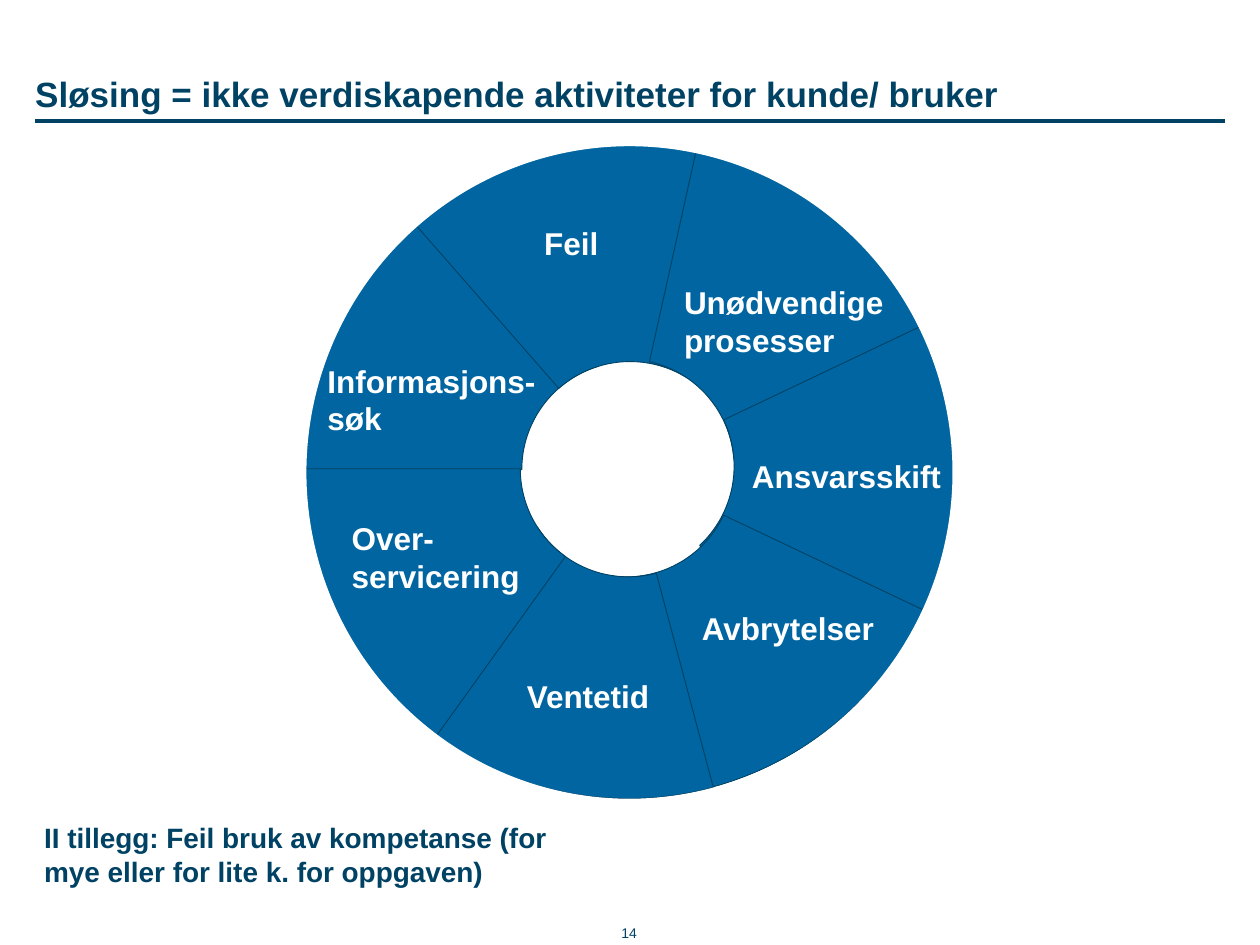
import math
from lxml import etree
from pptx import Presentation
from pptx import util as u
from pptx.dml.color import RGBColor
from pptx.enum import shapes, text
from pptx.oxml.ns import qn

# Content
TITLE = "Sløsing = ikke verdiskapende aktiviteter for kunde/ bruker"
FOOTNOTE = "II tillegg: Feil bruk av kompetanse (for mye eller for lite k. for oppgaven)"
PAGE_NUMBER = "14"
NAVY, BLUE, WHITE = "004264", "0065A0", "FFFFFF"

# Wheel sectors, back to front: centre (cm), start and end angle (degrees)
INNER_RADIUS, OUTER_RADIUS, ARC_STEPS = 2.18, 6.65, 32
SECTORS = [
    ((12.7, 9.47), 180, 106.8),
    ((12.7, 9.47), 131.2, 58.4),
    ((12.62, 9.42), 77.5, 4.6),
    ((12.62, 9.4), 25.4, -47.1),
    ((12.62, 9.45), -25.4, -98.6),
    ((12.67, 9.45), -75.1, -147),
    ((12.67, 9.45), -125.7, -180),
]

# Labels: lines, then left, top, width, height (cm)
LABELS = [
    (["Unødvendige", "prosesser"], (13.69, 5.61, 4.27, 2.51)),
    (["Ansvarsskift"], (15.06, 9.12, 4.04, 0.97)),
    (["Avbrytelser"], (14.05, 12.17, 3.71, 0.97)),
    (["Over-", "servicering"], (6.99, 10.36, 3.63, 1.75)),
    (["Ventetid"], (10.52, 13.54, 2.69, 0.97)),
    (["Informasjons-", "søk"], (6.5, 7.19, 4.45, 1.75)),
    (["Feil"], (10.87, 4.42, 1.3, 0.97)),
]


def color(target, hex_value):
    target.rgb = RGBColor.from_string(hex_value)


def set_line(line, hex_value, points):
    color(line.color, hex_value)
    line.width = u.Pt(points)


def write(shape, lines, size, hex_value, bold=True, align=text.PP_ALIGN.LEFT,
          anchor=text.MSO_ANCHOR.TOP, inset=0, wrap=True, space_before=0):
    frame = shape.text_frame
    margins = {f"margin_{side}": u.Cm(inset)
               for side in ("left", "top", "right", "bottom")}
    frame_format = {"word_wrap": wrap, "auto_size": text.MSO_AUTO_SIZE.NONE,
                    "vertical_anchor": anchor, **margins}
    for name, value in frame_format.items():
        setattr(frame, name, value)
    frame.text = "\n".join(lines)
    font_format = {"name": "Arial", "size": u.Pt(size), "bold": bold}
    for paragraph in frame.paragraphs:
        paragraph.alignment = align
        paragraph.space_before = u.Pt(space_before)
        font = paragraph.runs[0].font
        for name, value in font_format.items():
            setattr(font, name, value)
        color(font.color, hex_value)


def add_text(slide, box, lines, size, hex_value, **options):
    shape = slide.shapes.add_textbox(*map(u.Cm, box))
    write(shape, lines, size, hex_value, **options)


def arc(centre, radius, start, end):
    for step in range(ARC_STEPS + 1):
        angle = math.radians(start + (end - start) * step / ARC_STEPS)
        yield (u.Cm(centre[0] + radius * math.cos(angle)),
               u.Cm(centre[1] - radius * math.sin(angle)))


def add_sector(slide, centre, start, end):
    points = [*arc(centre, INNER_RADIUS, start, end),
              *arc(centre, OUTER_RADIUS, end, start)]
    builder = slide.shapes.build_freeform(*points[0])
    builder.add_line_segments(points[1:], close=True)
    sector = builder.convert_to_shape()
    sector.shadow.inherit = False
    sector.fill.solid()
    color(sector.fill.fore_color, BLUE)
    set_line(sector.line, NAVY, 0.5)


def main():
    presentation = Presentation()
    presentation.slide_width, presentation.slide_height = u.Cm(25.4), u.Cm(19.05)
    slide = presentation.slides.add_slide(presentation.slide_layouts[5])

    # Title, rule and page number
    title = slide.shapes.title
    title.left, title.top, title.width, title.height = map(u.Cm, (0.71, 0.61, 24, 1.7))
    write(title, [TITLE], 20, NAVY, anchor=text.MSO_ANCHOR.BOTTOM)
    rule = slide.shapes.add_connector(
        shapes.MSO_CONNECTOR.STRAIGHT, *map(u.Cm, (0.71, 2.44, 24.69, 2.44)))
    set_line(rule.line, NAVY, 2.25)
    etree.SubElement(rule._element.spPr, qn("a:effectLst"))
    add_text(slide, (11.86, 18.64, 1.65, 0.33), [PAGE_NUMBER], 8, NAVY, bold=False,
             align=text.PP_ALIGN.CENTER, anchor=text.MSO_ANCHOR.MIDDLE)

    # Wheel with its labels
    for centre, start, end in SECTORS:
        add_sector(slide, centre, start, end)
    for lines, box in LABELS:
        add_text(slide, box, lines, 18, WHITE, inset=0.1, wrap=False)

    # White rim around the wheel
    rim = slide.shapes.add_shape(
        shapes.MSO_SHAPE.OVAL, *map(u.Cm, (6.05, 2.82, 13.28, 13.41)))
    rim.shadow.inherit = False
    rim.fill.background()
    set_line(rim.line, WHITE, 7.25)

    # Footnote
    add_text(slide, (0.89, 16.54, 10.52, 1.37), [FOOTNOTE], 16, NAVY, space_before=6)

    presentation.save("out.pptx")


if __name__ == "__main__":
    main()
